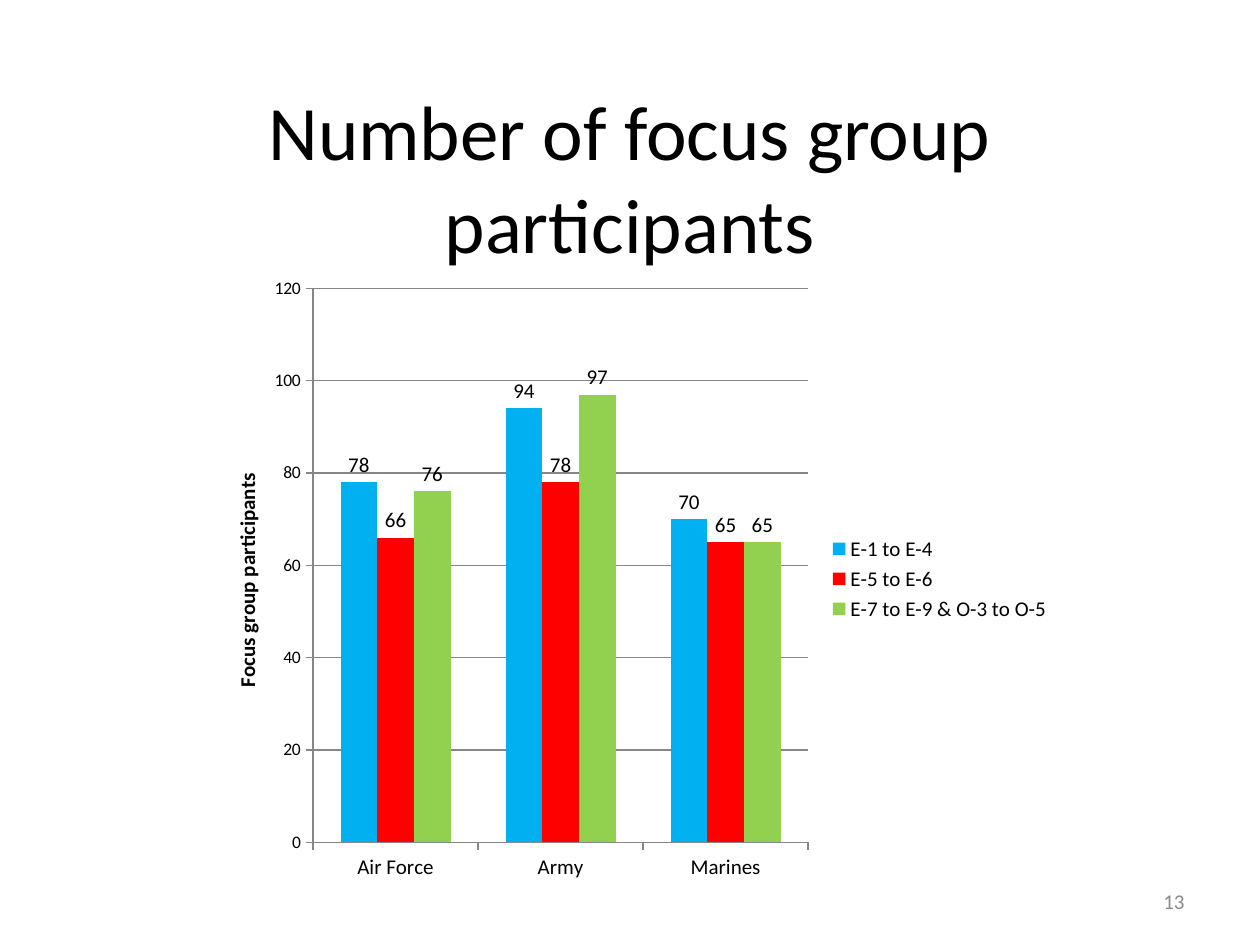
import pptx
import pptx.chart.data
import pptx.dml.color
import pptx.enum.chart
import pptx.enum.text
import pptx.oxml
import pptx.oxml.ns
import pptx.util
from pptx.util import Cm

CATEGORIES = ["Air Force", "Army", "Marines"]
SERIES = [
    ("E-1 to E-4", (78, 94, 70), "00B0F0"),
    ("E-5 to E-6", (66, 78, 65), "FF0000"),
    ("E-7 to E-9 & O-3 to O-5", (76, 97, 65), "92D050"),
]


def color(value):
    return pptx.dml.color.RGBColor.from_string(value)


def set_layout(element, index, **settings):
    """Give a chart part a manual layout, as fractions of the chart."""
    for old in element.findall(pptx.oxml.ns.qn("c:layout")):
        element.remove(old)
    items = "".join(f'<c:{key} val="{value}"/>' for key, value in settings.items())
    element.insert(index, pptx.oxml.parse_xml(
        f'<c:layout {pptx.oxml.ns.nsdecls("c")}>'
        f"<c:manualLayout>{items}</c:manualLayout></c:layout>"))


class SlideBuilder:
    font_name = "Calibri"
    ink = "000000"
    line = "868686"

    def __init__(self, slide):
        self.slide = slide

    def style_font(self, font, size, value=None, bold=False):
        font.name = self.font_name
        font.size = pptx.util.Pt(size)
        font.bold = bold
        font.color.rgb = color(value or self.ink)

    def text(self, words, box, size, align, value=None):
        shape = self.slide.shapes.add_textbox(*map(Cm, box))
        frame = shape.text_frame
        frame.word_wrap = True
        frame.vertical_anchor = pptx.enum.text.MSO_ANCHOR.MIDDLE
        frame.text = words
        paragraph = frame.paragraphs[0]
        paragraph.alignment = align
        self.style_font(paragraph.runs[0].font, size, value)

    def column_chart(self, box, categories, series_rows, axis_title):
        data = pptx.chart.data.CategoryChartData()
        data.categories = categories
        for name, values, _ in series_rows:
            data.add_series(name, values)
        chart = self.slide.shapes.add_chart(
            pptx.enum.chart.XL_CHART_TYPE.COLUMN_CLUSTERED,
            *map(Cm, box), data).chart
        chart.has_title = False
        self.style_font(chart.font, 10)

        # Columns and their labels
        plot = chart.plots[0]
        plot.gap_width = 150
        plot.overlap = 0
        plot.vary_by_categories = False
        for series, (_, _, fill) in zip(plot.series, series_rows):
            series.format.fill.solid()
            series.format.fill.fore_color.rgb = color(fill)
            labels = series.data_labels
            labels.show_value = True
            labels.position = pptx.enum.chart.XL_LABEL_POSITION.OUTSIDE_END
            self.style_font(labels.font, 12)

        # Axes
        value_axis = chart.value_axis
        value_axis.minimum_scale = 0
        value_axis.maximum_scale = 120
        value_axis.major_unit = 20
        value_axis.has_major_gridlines = True
        for axis, size in ((chart.category_axis, 12), (value_axis, 10)):
            axis.major_tick_mark = pptx.enum.chart.XL_TICK_MARK.OUTSIDE
            axis.format.line.color.rgb = color(self.line)
            self.style_font(axis.tick_labels.font, size)
        value_axis.major_gridlines.format.line.color.rgb = color(self.line)
        title = value_axis.axis_title
        title.text_frame.text = axis_title
        self.style_font(title.text_frame.paragraphs[0].runs[0].font, 12, bold=True)

        # Legend
        chart.has_legend = True
        chart.legend.position = pptx.enum.chart.XL_LEGEND_POSITION.RIGHT
        chart.legend.include_in_layout = False
        self.style_font(chart.legend.font, 12)

        # Places of the plot and the axis title
        plot_area = chart.element.chart.plotArea
        set_layout(plot_area, 0, layoutTarget="inner", xMode="edge", yMode="edge",
                   x=0.133, y=0.036, w=0.572, h=0.885)
        set_layout(title.element if hasattr(title, "element") else title._element,
                   1, xMode="edge", yMode="edge", x=0.036, y=0.325)


def main():
    presentation = pptx.Presentation()
    presentation.slide_width = Cm(25.4)
    presentation.slide_height = Cm(19.05)
    slide = presentation.slides.add_slide(presentation.slide_layouts[6])
    builder = SlideBuilder(slide)
    align = pptx.enum.text.PP_ALIGN

    # Title
    builder.text("Number of focus group participants",
                 (1.27, 1.96, 22.86, 3.18), 44, align.CENTER)

    # Slide number
    builder.text("13", (18.2, 17.66, 5.93, 1.01), 12, align.RIGHT, "8C8C8C")

    # Participants by service and rank
    builder.column_chart((3.99, 5.36, 17.45, 12.62), CATEGORIES, SERIES,
                         "Focus group participants")

    presentation.save("out.pptx")


if __name__ == "__main__":
    main()
